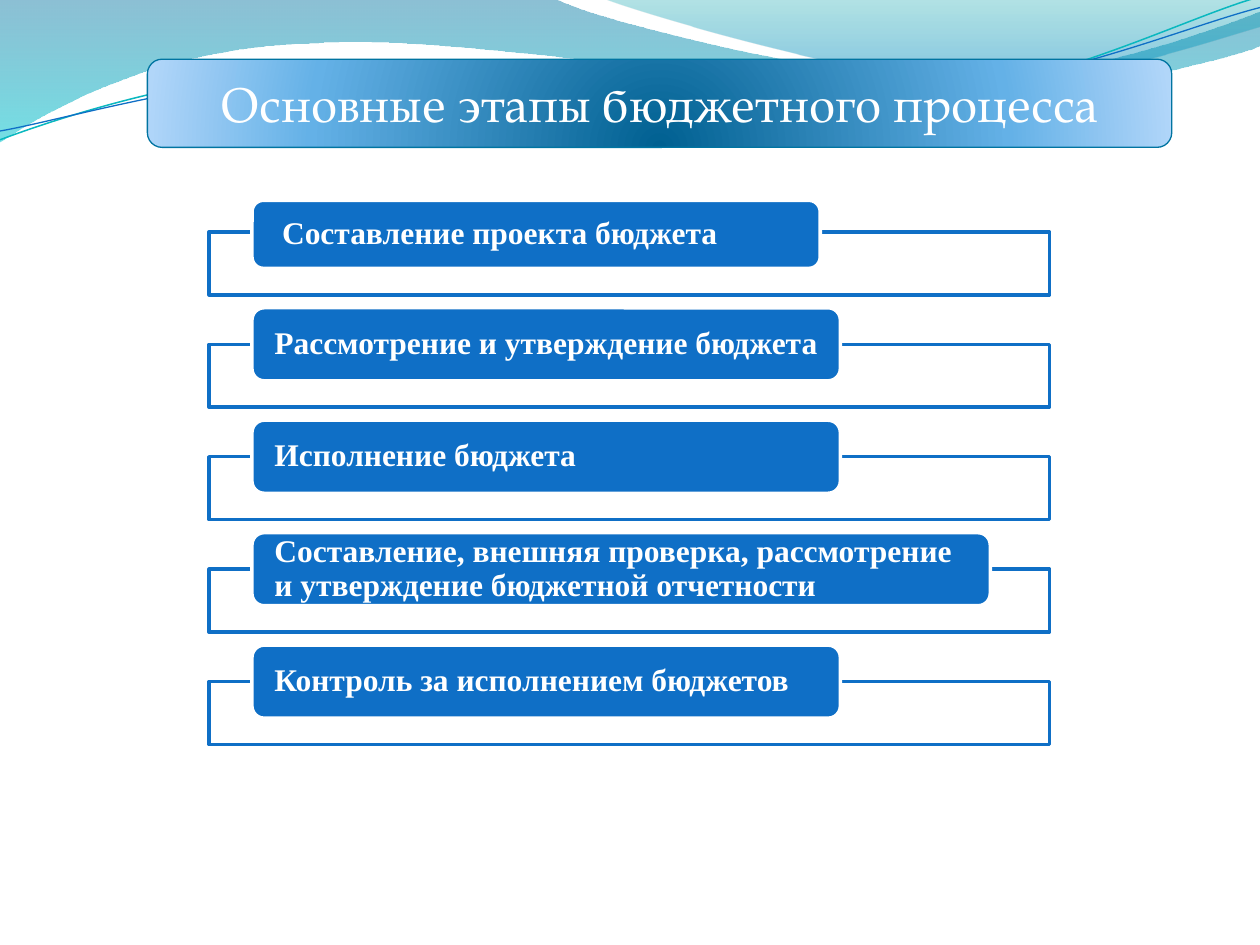
from dataclasses import dataclass

from lxml.etree import SubElement
from pptx import Presentation
from pptx.dml.color import RGBColor
from pptx.enum.shapes import MSO_SHAPE
from pptx.enum.text import MSO_ANCHOR, PP_ALIGN
from pptx.oxml.ns import qn
from pptx.util import Inches, Pt


@dataclass(frozen=True)
class Theme:
    white: str = "FFFFFF"
    blue: str = "0F6FC6"
    teal: str = "0AB8BF"
    title_line: str = "0074A1"
    title_font: str = "TeX Gyre Pagella"
    body_font: str = "Times New Roman"
    title_size: int = 28
    body_size: int = 18
    # Gradient stops: position %, colour, opacity %
    title_stops: tuple = ((0, "006091", 100), (68, "64B1E7", 100), (100, "B1D6F9", 100))
    wide_wave_stops: tuple = ((0, "0074A1", 45), (100, "00C6CF", 55))
    right_wave_stops: tuple = ((0, "00A1A9", 30), (80, "008BBF", 45))


THEME = Theme()

# Waves in inches: a pair is a line to a point, a six is a cubic curve.
WIDE_WAVE = [
    (0, 0), (4.4, -0.01),
    (4.76, 0.17, 6.64, 0.63, 7.58, 0.63), (8.53, 0.63, 9.58, 0.26, 10, 0.09),
    (10.01, 0.36),
    (9.83, 0.44, 8.7, 0.76, 7.46, 0.75), (6.22, 0.75, 3.82, 0.28, 2.57, 0.34),
    (1.29, 0.36, 0.46, 0.83, -0.01, 1.13),
]
RIGHT_WAVE = [
    (4.79, -0.01),
    (5.09, 0.11, 6.82, 0.62, 7.69, 0.65), (8.56, 0.69, 9.61, 0.32, 10, 0.21),
    (10, 0),
]
TEAL_STRAND = [
    (0, 1.11),
    (0.48, 0.93, 1.58, 0.57, 2.77, 0.52), (3.95, 0.47, 5.93, 0.89, 7.13, 0.8),
    (8.33, 0.71, 9.38, 0.15, 9.98, -0.02),
]
BLUE_STRAND = [
    (0, 1.04),
    (0.47, 0.96, 1.64, 0.61, 2.83, 0.56), (4.03, 0.51, 5.97, 0.84, 7.17, 0.75),
    (8.36, 0.67, 9.41, 0.21, 10, 0.06),
]

TITLE = "Основные этапы бюджетного процесса"
TITLE_AREA = (1.17, 0.47, 8.13, 0.7)
# Stage text, label width, label height
STAGES = [
    (" Составление проекта бюджета", 4.51, 0.54),
    ("Рассмотрение и утверждение бюджета", 4.67, 0.58),
    ("Исполнение бюджета", 4.67, 0.58),
    ("Составление, внешняя проверка, рассмотрение и утверждение бюджетной отчетности", 5.86, 0.58),
    ("Контроль за исполнением бюджетов", 4.67, 0.58),
]
FIRST_FRAME_TOP, LAST_FRAME_TOP = 1.84, 5.41
LABEL_OVERLAP = 0.29


def fill_gradient(shape, stops, circle=None):
    """Run the stops from top to bottom, or out of the circle's l, t, r, b percentages."""
    shape.fill.background()
    properties = shape._element.spPr
    gradient = SubElement(properties, qn("a:gradFill"), rotWithShape="1")
    properties.replace(properties.find(qn("a:noFill")), gradient)
    stop_list = SubElement(gradient, qn("a:gsLst"))
    for position, color, opacity in stops:
        stop = SubElement(stop_list, qn("a:gs"), pos=str(position * 1000))
        stop_color = SubElement(stop, qn("a:srgbClr"), val=color)
        if opacity < 100:
            SubElement(stop_color, qn("a:alpha"), val=str(opacity * 1000))
    if circle:
        center = SubElement(gradient, qn("a:path"), path="circle")
        sides = {side: str(value * 1000) for side, value in zip("ltrb", circle)}
        SubElement(center, qn("a:fillToRect"), **sides)
    else:
        SubElement(gradient, qn("a:lin"), ang="5400000", scaled="0")


def outline(shape, color, width):
    shape.line.color.rgb = RGBColor.from_string(color)
    shape.line.width = Pt(width)


def write_text(shape, text, *, font, size, bold=False, align=PP_ALIGN.LEFT,
               spacing=1.0, insets=(0.1, 0.05, 0.1, 0.05)):
    frame = shape.text_frame
    frame.word_wrap = True
    frame.vertical_anchor = MSO_ANCHOR.MIDDLE
    (frame.margin_left, frame.margin_top,
     frame.margin_right, frame.margin_bottom) = map(Inches, insets)
    paragraph = frame.paragraphs[0]
    paragraph.alignment = align
    paragraph.line_spacing = spacing
    run = paragraph.add_run()
    run.text = text
    run.font.name = font
    run.font.size = Pt(size)
    run.font.bold = bold
    run.font.color.rgb = RGBColor.from_string(THEME.white)


def add_path(slide, segments, close):
    """Draw the segments' end points, then bend the lines that stand for curves."""
    ends = [(Inches(segment[-2]), Inches(segment[-1])) for segment in segments]
    builder = slide.shapes.build_freeform(*ends[0])
    builder.add_line_segments(ends[1:], close=close)
    shape = builder.convert_to_shape()
    shape.shadow.inherit = False
    lines = list(shape._element.iter(qn("a:lnTo")))
    for line, segment in zip(lines, segments[1:]):
        if len(segment) == 6:
            line.tag = qn("a:cubicBezTo")
            line.clear()
            for x, y in zip(segment[::2], segment[1::2]):
                SubElement(line, qn("a:pt"), x=str(Inches(x) - shape.left),
                           y=str(Inches(y) - shape.top))
    return shape


def add_wave(slide, segments, stops):
    wave = add_path(slide, segments, close=True)
    fill_gradient(wave, stops)
    wave.line.fill.background()


def add_strand(slide, segments, color, width):
    strand = add_path(slide, segments, close=False)
    strand.fill.background()
    outline(strand, color, width)


def add_box(slide, kind, area, line, line_width, fill=None):
    box = slide.shapes.add_shape(kind, *map(Inches, area))
    box.shadow.inherit = False
    outline(box, line, line_width)
    if fill:
        box.fill.solid()
        box.fill.fore_color.rgb = RGBColor.from_string(fill)
    return box


def add_title(slide):
    panel = add_box(slide, MSO_SHAPE.ROUNDED_RECTANGLE, TITLE_AREA, THEME.title_line, 0.75)
    fill_gradient(panel, THEME.title_stops, circle=(50, 130, 50, -30))
    title = slide.shapes.title
    title.left, title.top, title.width, title.height = map(Inches, TITLE_AREA)
    write_text(title, TITLE, font=THEME.title_font, size=THEME.title_size, align=PP_ALIGN.CENTER)
    # The title lies in front of its panel
    slide.shapes._spTree.append(title._element)


def add_stage(slide, frame_top, text, width, height):
    add_box(slide, MSO_SHAPE.RECTANGLE, (1.66, frame_top, 6.67, 0.5), THEME.blue, 2, THEME.white)
    label_area = (2, frame_top + LABEL_OVERLAP - height, width, height)
    label = add_box(slide, MSO_SHAPE.ROUNDED_RECTANGLE, label_area, THEME.white, 2, THEME.blue)
    write_text(label, text, font=THEME.body_font, size=THEME.body_size, bold=True,
               spacing=0.9, insets=(0.15, 0, 0.12, 0))


def main():
    deck = Presentation()
    deck.slide_width, deck.slide_height = Inches(10), Inches(7.5)
    slide = deck.slides.add_slide(deck.slide_layouts[5])
    add_wave(slide, WIDE_WAVE, THEME.wide_wave_stops)
    add_wave(slide, RIGHT_WAVE, THEME.right_wave_stops)
    add_strand(slide, TEAL_STRAND, THEME.teal, 0.85)
    add_strand(slide, BLUE_STRAND, THEME.blue, 0.75)
    add_title(slide)
    pitch = (LAST_FRAME_TOP - FIRST_FRAME_TOP) / (len(STAGES) - 1)
    for row, stage in enumerate(STAGES):
        add_stage(slide, FIRST_FRAME_TOP + row * pitch, *stage)
    deck.save("out.pptx")


if __name__ == "__main__":
    main()
